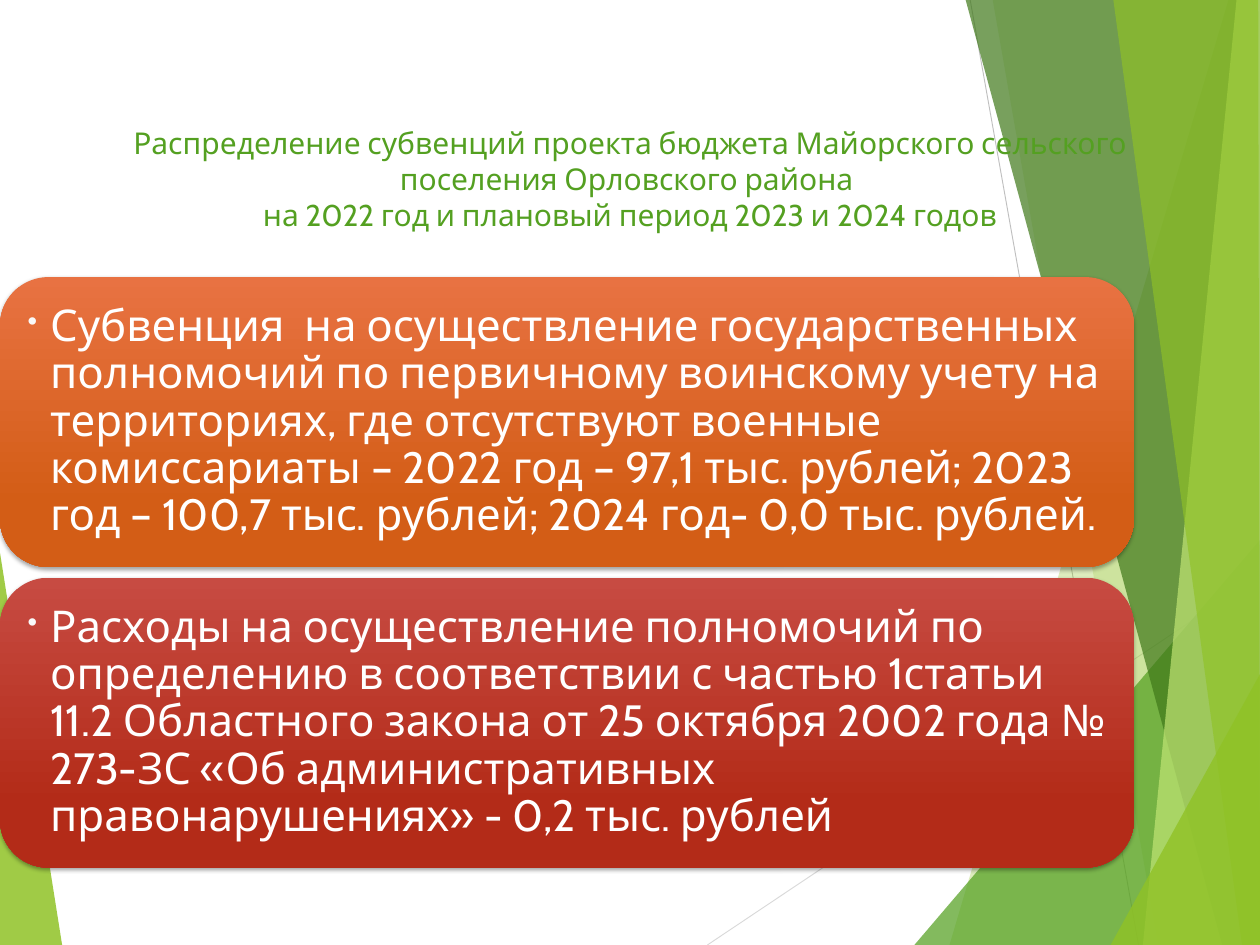
from lxml import etree
from pptx import Presentation
from pptx.dml.color import RGBColor
from pptx.enum.shapes import MSO_CONNECTOR, MSO_SHAPE
from pptx.enum.text import MSO_ANCHOR, PP_ALIGN
from pptx.oxml.ns import qn
from pptx.util import Inches, Pt

STRAIGHT = MSO_CONNECTOR.STRAIGHT
ROUNDED = MSO_SHAPE.ROUNDED_RECTANGLE
BOTTOM, MIDDLE = MSO_ANCHOR.BOTTOM, MSO_ANCHOR.MIDDLE
CENTER, LEFT = PP_ALIGN.CENTER, PP_ALIGN.LEFT

THEME = {
    "font": "Cabin", "title_size": 24, "card_size": 35,
    "lime": "90C226", "green": "54A021", "forest": "3F7819", "pale": "C0E474",
    "orange": ("E87242", "D35D16"), "red": ("C74B42", "B32B18"),
    "white": "FFFFFF", "bullet": "F9F9F9", "shadow": "000000",
    "line_dark": "BFBFBF", "line_light": "D9D9D9",
}

prs = Presentation()
prs.slide_width, prs.slide_height = Inches(14), Inches(10.5)
slide = prs.slides.add_slide(prs.slide_layouts[6])
shapes = slide.shapes

# One column or row is one percent of the slide's width or height.
COL, ROW = prs.slide_width / 100, prs.slide_height / 100


def place(*shares):
    """Turn alternating column and row shares into slide lengths."""
    return [round(share * (ROW if i % 2 else COL)) for i, share in enumerate(shares)]


def add_run(paragraph, text, size, color):
    run = paragraph.add_run()
    run.text = text
    run.font.name = THEME["font"]
    run.font.size = Pt(size)
    run.font.color.rgb = RGBColor.from_string(THEME[color])


# Background facets: colour, opacity in percent, corners; None is a thin line
facets = [
    ("lime", 85, [(0, 58.5), (4.93, 100), (0, 100)]),
    ("line_light", None, [(56.14, 100), (100, 60.86)]),
    ("line_dark", None, [(77, 0), (90.36, 100)]),
    ("lime", 30, [(97.5, 0), (75.36, 100), (100, 100), (100, 0)]),
    ("lime", 20, [(78.79, 0), (91.93, 100), (100, 100), (100, 0)]),
    ("green", 72, [(72.57, 100), (100, 57.14), (100, 100)]),
    ("forest", 70, [(76.64, 0), (97, 100), (100, 100), (100, 0)]),
    ("pale", 70, [(98.14, 0), (90.71, 100), (100, 100), (100, 0)]),
    ("lime", 65, [(88.36, 0), (98.57, 100), (100, 100), (99.86, 0)]),
    ("lime", 80, [(88.14, 100), (100, 71.33), (100, 100)]),
]
for color, opacity, corners in facets:
    rgb = RGBColor.from_string(THEME[color])
    points = [place(*corner) for corner in corners]
    if opacity is None:
        ray = shapes.add_connector(STRAIGHT, *points[0], *points[1])
        ray.line.color.rgb = rgb
        ray.line.width = Pt(0.75)
        etree.SubElement(ray._element.spPr, qn("a:effectLst"))
        continue
    builder = shapes.build_freeform(*points[0], scale=1.0)
    builder.add_line_segments(points[1:], close=True)
    facet = builder.convert_to_shape()
    facet.shadow.inherit = False
    facet.line.fill.background()
    facet.fill.solid()
    facet.fill.fore_color.rgb = rgb
    tint = facet._element.spPr.find(".//" + qn("a:srgbClr"))
    etree.SubElement(tint, qn("a:alpha"), val=str(opacity * 1000))

# Title
title = shapes.add_textbox(*place(5, 4, 90, 25.14)).text_frame
title.word_wrap = True
title.vertical_anchor = BOTTOM
title.margin_left = title.margin_right = round(COL)
title.margin_bottom = round(4.5 * ROW)
heading = title.paragraphs[0]
heading.alignment = CENTER
add_run(heading, "Распределение субвенций проекта бюджета Майорского сельского "
        "поселения Орловского района ", THEME["title_size"], "green")
heading.add_line_break()
add_run(heading, "на 2022 год и плановый период 2023 и 2024 годов",
        THEME["title_size"], "green")

# Subvention cards
CARD_TOP, CARD_WIDTH, CARD_HEIGHT, CARD_STEP = 29.33, 90, 30.67, 31.81
cards = [
    ("orange", "Субвенция  на осуществление государственных полномочий по первичному "
     "воинскому учету на территориях, где отсутствуют военные комиссариаты – "
     "2022 год – 97,1 тыс. рублей; 2023 год – 100,7 тыс. рублей; "
     "2024 год- 0,0 тыс. рублей."),
    ("red", "Расходы на осуществление полномочий по определению в соответствии с "
     "частью 1статьи 11.2 Областного закона от 25 октября 2002 года № 273-ЗС "
     "«Об административных правонарушениях» - 0,2 тыс. рублей"),
]
for index, (gradient, wording) in enumerate(cards):
    top = CARD_TOP + index * CARD_STEP
    card = shapes.add_shape(ROUNDED, *place(0, top, CARD_WIDTH, CARD_HEIGHT))
    card.line.fill.background()
    card.fill.gradient()
    card.fill.gradient_angle = 270
    for stop, color, position in zip(card.fill.gradient_stops, THEME[gradient], (0, 0.78)):
        stop.color.rgb = RGBColor.from_string(color)
        stop.position = position

    card.shadow.inherit = False
    effects = card._element.spPr.find(qn("a:effectLst"))
    shadow = etree.SubElement(effects, qn("a:outerShdw"), blurRad=str(Pt(3)),
                              dist=str(Pt(2)), dir="5400000", rotWithShape="0")
    shade = etree.SubElement(shadow, qn("a:srgbClr"), val=THEME["shadow"])
    etree.SubElement(shade, qn("a:alpha"), val="35000")

    frame = card.text_frame
    frame.word_wrap = True
    frame.vertical_anchor = MIDDLE
    frame.margin_left = frame.margin_right = round(1.07 * COL)
    frame.margin_top = frame.margin_bottom = round(1.43 * ROW)
    item = frame.paragraphs[0]
    item.alignment = LEFT
    item.line_spacing = 0.9
    layout = item._p.get_or_add_pPr()
    indent = round(1.79 * COL)
    layout.set("marL", str(indent))
    layout.set("indent", str(-indent))
    bullet_color = etree.SubElement(layout, qn("a:buClr"))
    etree.SubElement(bullet_color, qn("a:srgbClr"), val=THEME["bullet"])
    etree.SubElement(layout, qn("a:buSzPct"), val="65000")
    etree.SubElement(layout, qn("a:buChar"), char="•")
    add_run(item, wording, THEME["card_size"], "white")

prs.save("out.pptx")
